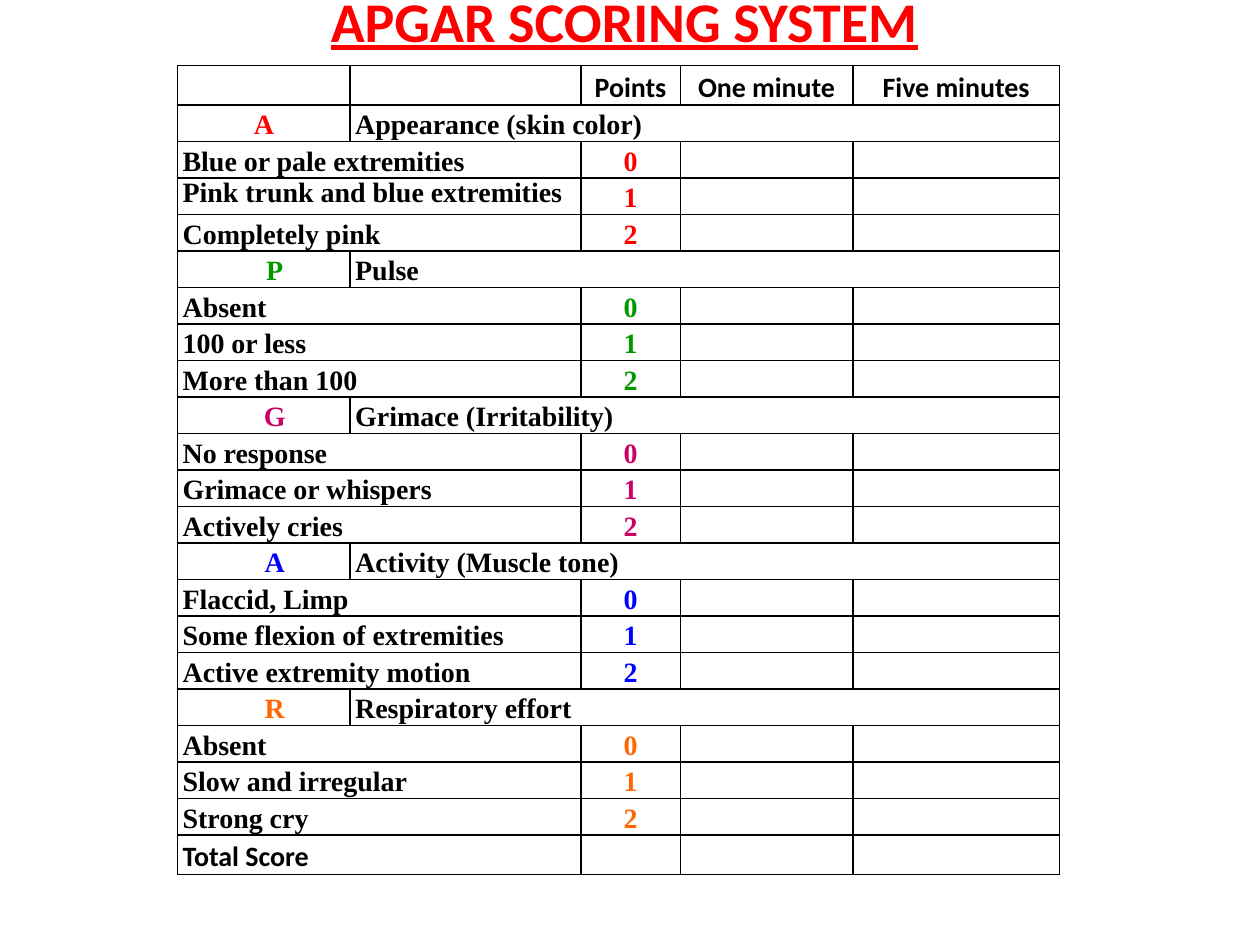
from lxml.etree import SubElement
from pptx import Presentation
from pptx.dml.color import RGBColor
from pptx.enum.text import MSO_AUTO_SIZE as Fit, PP_ALIGN as Align
from pptx.oxml.ns import qn
from pptx.util import Inches, Pt

SERIF, SANS, BLACK, RED = "Times New Roman", "Calibri", "000000", "FF0000"
COLS = [1.37, 1.83, 0.79, 1.37, 1.64]
ROW, SIZE, PAD = 0.29, 16, 0.04
SIGNS = [
    ("A", "Appearance (skin color)", RED,
     ["Blue or pale extremities", "Pink trunk and blue extremities", "Completely pink"]),
    ("P", "Pulse", "009900", ["Absent", "100 or less", "More than 100"]),
    ("G", "Grimace (Irritability)", "CC0066",
     ["No response", "Grimace or whispers", "Actively cries"]),
    ("A", "Activity (Muscle tone)", "0000FF",
     ["Flaccid, Limp", "Some flexion of extremities", "Active extremity motion"]),
    ("R", "Respiratory effort", "FF6600", ["Absent", "Slow and irregular", "Strong cry"]),
]


def ink(font, tint):
    font.color.rgb = RGBColor.from_string(tint)


def write(box, text, tint=BLACK, face=SERIF, size=SIZE, align=Align.LEFT, lead=1.15):
    """Fill the first paragraph of a cell or text frame with one bold run."""
    para = box.paragraphs[0]
    para.alignment, para.line_spacing = align, lead
    run = para.add_run()
    run.text = text
    run.font.name, run.font.size, run.font.bold = face, Pt(size), True
    ink(run.font, tint)
    return run


deck = Presentation()
deck.slide_width, deck.slide_height = Inches(10), Inches(7.5)
slide = deck.slides.add_slide(deck.slide_layouts[6])

# Grid: header, one heading and three grades for each sign, total
count = 2 + sum(1 + len(sign[3]) for sign in SIGNS)
grid = slide.shapes.add_table(count, len(COLS), Inches(1.41), Inches(0.52),
                              Inches(sum(COLS)), Inches(ROW * count)).table
grid.first_row = grid.horz_banding = False
for col, width in zip(grid.columns, COLS):
    col.width = Inches(width)
for row in grid.rows:
    row.height = Inches(ROW)

for cell in grid.iter_cells():
    cell.margin_left = cell.margin_right = Inches(PAD)
    cell.margin_top = cell.margin_bottom = 0
    props = cell._tc.get_or_add_tcPr()
    for side in ("a:lnL", "a:lnR", "a:lnT", "a:lnB"):
        line = SubElement(props, qn(side), w=str(Pt(1)))
        SubElement(SubElement(line, qn("a:solidFill")), qn("a:srgbClr"), val=BLACK)
    cell.fill.background()
    # Keeps empty cells from stretching their row
    SubElement(cell.text_frame.paragraphs[0]._p, qn("a:endParaRPr"), sz=str(SIZE * 100))

for c, label in enumerate(["Points", "One minute", "Five minutes"], 2):
    write(grid.cell(0, c).text_frame, label, face=SANS, align=Align.CENTER)

r = 1
for n, (letter, sign, tint, grades) in enumerate(SIGNS):
    head = grid.cell(r, 0)
    if n:
        head.margin_left = Inches(PAD + 0.17)
    write(head.text_frame, letter, tint, align=Align.CENTER)
    grid.cell(r, 1).merge(grid.cell(r, 4))
    write(grid.cell(r, 1).text_frame, sign)
    for points, grade in enumerate(grades):
        r += 1
        grid.cell(r, 0).merge(grid.cell(r, 1))
        lead = 1.0 if grade.startswith("Pink") else 1.15
        write(grid.cell(r, 0).text_frame, grade, lead=lead)
        write(grid.cell(r, 2).text_frame, str(points), tint, align=Align.CENTER)
    r += 1

grid.cell(r, 0).merge(grid.cell(r, 1))
write(grid.cell(r, 0).text_frame, "Total Score", face=SANS)

# Title
title = slide.shapes.add_textbox(Inches(2.31), Inches(-0.16), Inches(5.29), Inches(0.64))
title.text_frame.word_wrap = True
title.text_frame.auto_size = Fit.SHAPE_TO_FIT_TEXT
run = write(title.text_frame, "APGAR SCORING SYSTEM", RED, SANS, 32, Align.CENTER, 1.0)
run.font.underline = True

deck.save("out.pptx")
